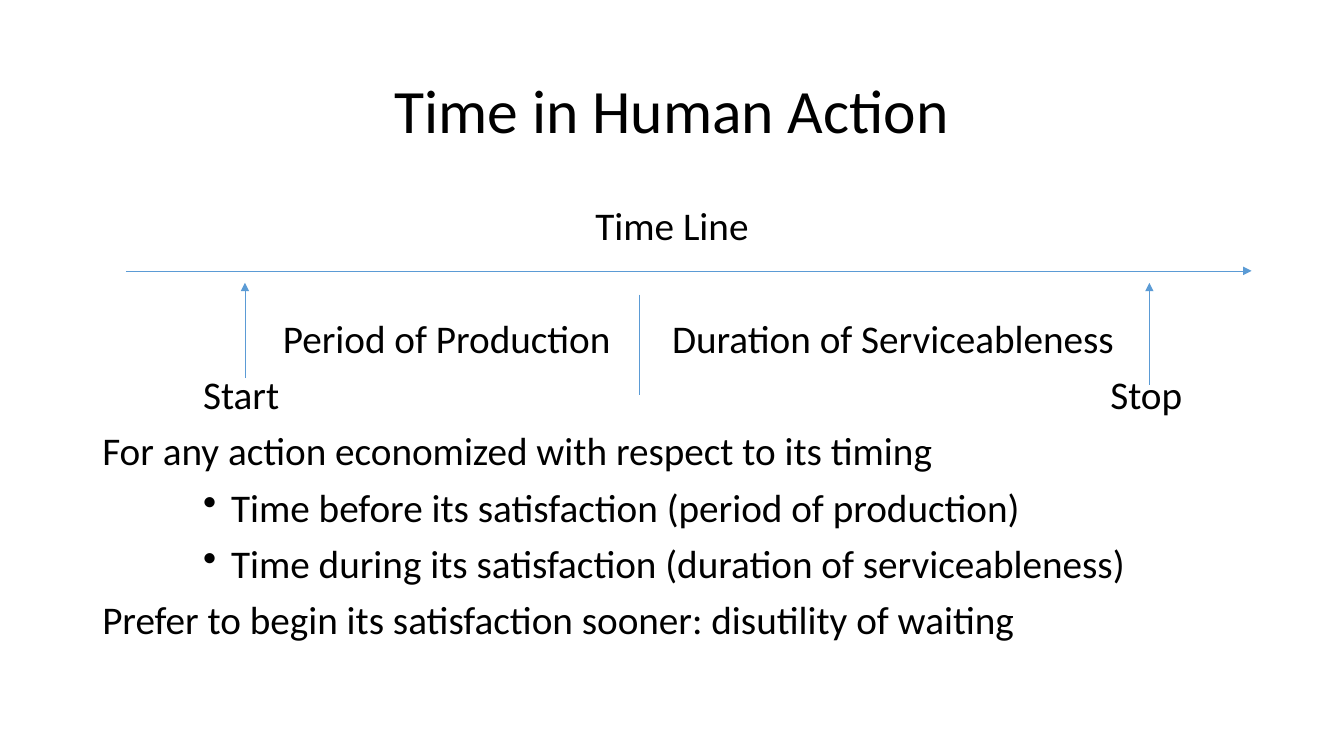
import pptx
import pptx.util
import pptx.dml.color
import pptx.enum.shapes
import pptx.enum.text
import pptx.oxml.ns
from lxml import etree

Pt = pptx.util.Pt
ALIGN = pptx.enum.text.PP_ALIGN
ANCHOR = pptx.enum.text.MSO_ANCHOR
COLORS = {"text": "000000", "line": "5B9BD5"}
FONT = "Calibri"
BODY_SIZE = 28
PARA_GAP = 10
SKIPPED_LINE = 40.3
TAB = 72
BULLET_INDENT = 20


def add_element(parent, tag, **attributes):
    return etree.SubElement(parent, pptx.oxml.ns.qn(tag), attributes)


def format_para(para, size, align):
    para.alignment = align
    para.line_spacing = 0.9
    para.font.name = FONT
    para.font.size = Pt(size)
    para.font.color.rgb = pptx.dml.color.RGBColor.from_string(COLORS["text"])


def place_title(page, left, top, width, height):
    title = page.shapes.title
    title.left, title.top = Pt(left), Pt(top)
    title.width, title.height = Pt(width), Pt(height)
    title.text_frame.text = "Time in Human Action"
    title.text_frame.vertical_anchor = ANCHOR.MIDDLE
    format_para(title.text_frame.paragraphs[0], 44, ALIGN.CENTER)


def set_tabs(para, stops):
    tabs = add_element(para._p.get_or_add_pPr(), "a:tabLst")
    for stop in stops:
        add_element(tabs, "a:tab", pos=str(Pt(stop)), algn="l")


def set_bullet(para):
    props = para._p.get_or_add_pPr()
    props.set("marL", str(Pt(TAB + BULLET_INDENT)))
    props.set("indent", str(Pt(-BULLET_INDENT)))
    add_element(props, "a:buChar", char="•")


def add_body(page, left, top, width, height):
    lines = [
        ("Time Line", "center", ()),
        ("\tPeriod of Production\tDuration of Serviceableness", "tabs", (129, 407)),
        ("\tStart\tStop", "tabs", (TAB, 10 * TAB)),
        ("For any action economized with respect to its timing", "plain", ()),
        ("Time before its satisfaction (period of production)", "bullet", ()),
        ("Time during its satisfaction (duration of serviceableness)", "bullet", ()),
        ("Prefer to begin its satisfaction sooner: disutility of waiting", "plain", ()),
    ]
    box = page.shapes.add_textbox(Pt(left), Pt(top), Pt(width), Pt(height))
    frame = box.text_frame
    frame.word_wrap = True
    for index, (text, style, stops) in enumerate(lines):
        para = frame.paragraphs[0] if index == 0 else frame.add_paragraph()
        para.add_run().text = text
        if style == "tabs":
            set_tabs(para, stops)
        elif style == "bullet":
            set_bullet(para)
        format_para(para, BODY_SIZE, ALIGN.CENTER if style == "center" else ALIGN.LEFT)
        para.space_before = Pt(PARA_GAP + SKIPPED_LINE if index == 1 else PARA_GAP)


def add_line(page, start, end, arrow):
    line = page.shapes.add_connector(
        pptx.enum.shapes.MSO_CONNECTOR.STRAIGHT, *map(Pt, start + end)
    )
    line.line.width = Pt(0.5)
    line.line.color.rgb = pptx.dml.color.RGBColor.from_string(COLORS["line"])
    if arrow:
        add_element(line.line._get_or_add_ln(), "a:tailEnd", type="triangle")
    add_element(line._element.spPr, "a:effectLst")


def add_time_line(page, left, top, width):
    add_line(page, (left, top), (left + width, top), True)
    for offset, tail, tip, arrow in [
        (85, 76.5, 8.5, True),
        (731, 81.5, 8.5, True),
        (367, 17, 88.5, False),
    ]:
        start = (left + offset, top + tail)
        add_line(page, start, (left + offset, top + tip), arrow)


def main():
    deck = pptx.Presentation()
    deck.slide_width, deck.slide_height = Pt(960), Pt(540)
    page = deck.slides.add_slide(deck.slide_layouts[5])
    place_title(page, 66, 28.75, 828, 104.4)
    add_body(page, 66, 144, 828, 342.6)
    add_time_line(page, 90, 193.5, 804)
    deck.save("out.pptx")


if __name__ == "__main__":
    main()
